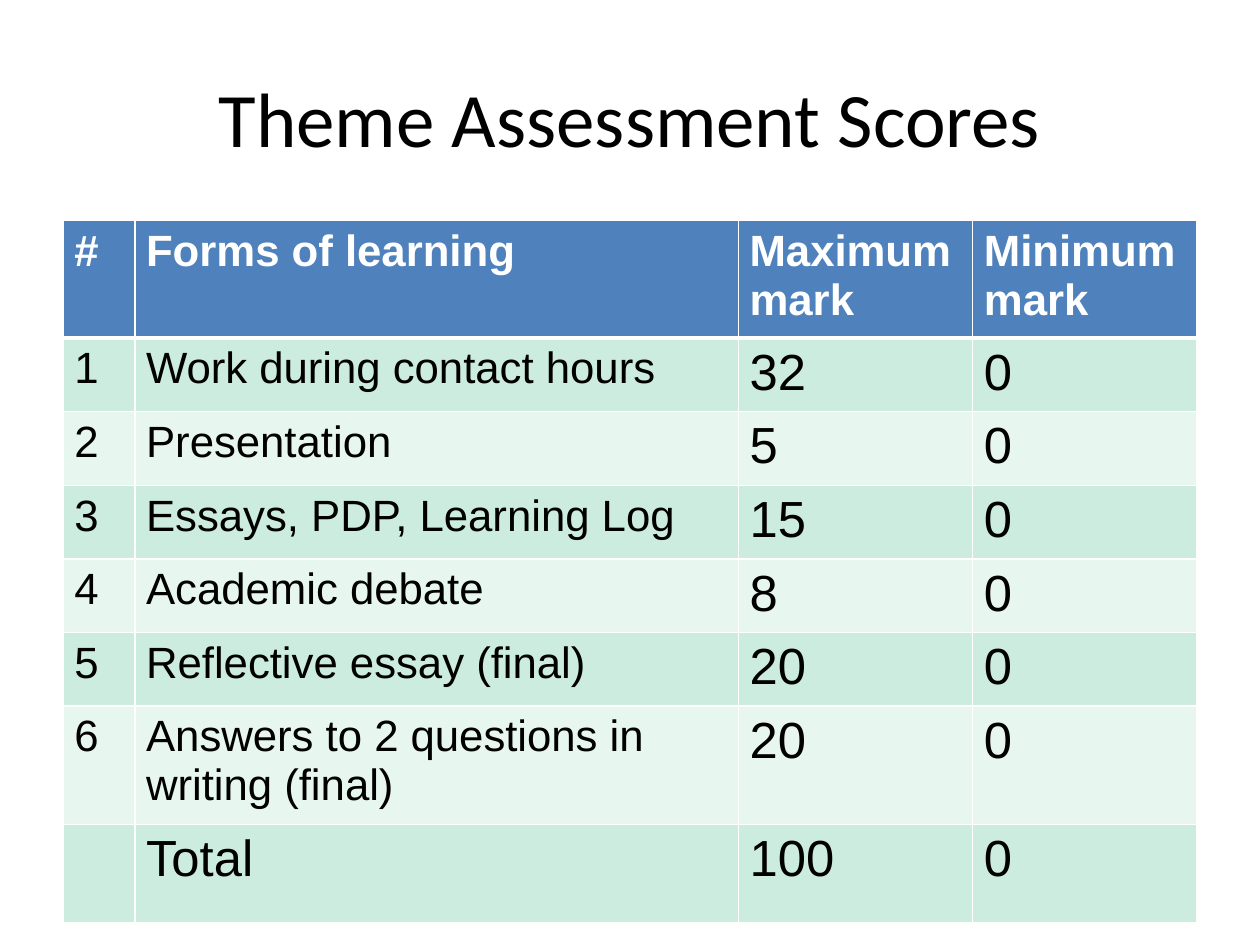
from dataclasses import dataclass

from lxml.etree import SubElement
from pptx import Presentation
from pptx.dml.color import RGBColor as Color
from pptx.enum.text import MSO_ANCHOR as Anchor, PP_ALIGN as Align
from pptx.oxml.ns import qn
from pptx.util import Inches, Pt

TITLE = "Theme Assessment Scores"
HEADER = ("#", "Forms of learning", "Maximum mark", "Minimum mark")
SCORES = [
    ("1", "Work during contact hours", "32", "0"),
    ("2", "Presentation", "5", "0"),
    ("3", "Essays, PDP, Learning Log", "15", "0"),
    ("4", "Academic debate", "8", "0"),
    ("5", "Reflective essay (final)", "20", "0"),
    ("6", "Answers to 2 questions in writing (final)", "20", "0"),
]
TOTAL = ("", "Total", "100", "0")

COLUMN_WIDTHS = (0.57, 4.79, 1.86, 1.78)
ROW_HEIGHTS = (0.93, *[0.57] * 5, 0.94, 0.78)
MARK_COLUMN = 2  # first of the columns that hold marks


@dataclass(frozen=True)
class Theme:
    title_font: str = "Calibri"
    table_font: str = "Arial"
    title_size: int = 44
    label_size: int = 25
    mark_size: int = 29
    text: str = "000000"
    header_text: str = "FFFFFF"
    header_fill: str = "4F81BD"
    bands: tuple = ("CBECDE", "E7F6EF")
    border: str = "FFFFFF"
    thin: int = 1
    thick: int = 3


THEME = Theme()


def add_run(paragraph, text, font_name, size, color, bold=False):
    run = paragraph.add_run()
    run.text = text
    run.font.name = font_name
    run.font.size = Pt(size)
    run.font.bold = bold
    run.font.color.rgb = Color.from_string(color)


def add_title(slide):
    box = slide.shapes.add_textbox(Inches(0.5), Inches(0.3), Inches(9), Inches(1.25))
    frame = box.text_frame
    frame.word_wrap = True
    frame.vertical_anchor = Anchor.MIDDLE
    paragraph = frame.paragraphs[0]
    paragraph.alignment = Align.CENTER
    add_run(paragraph, TITLE, THEME.title_font, THEME.title_size, THEME.text)


def set_borders(cell, top, bottom):
    """Draw all four sides; must come before the fill, as the schema orders them."""
    properties = cell._tc.get_or_add_tcPr()
    widths = {"lnL": THEME.thin, "lnR": THEME.thin, "lnT": top, "lnB": bottom}
    for side, width in widths.items():
        line = SubElement(properties, qn(f"a:{side}"), w=str(Pt(width)))
        fill = SubElement(line, qn("a:solidFill"))
        SubElement(fill, qn("a:srgbClr"), val=THEME.border)


def fill_cell(cell, text, row, column):
    is_header = row == 0
    set_borders(
        cell,
        top=THEME.thick if row == 1 else THEME.thin,
        bottom=THEME.thick if is_header else THEME.thin,
    )
    band = THEME.bands[(row - 1) % 2]
    cell.fill.solid()
    cell.fill.fore_color.rgb = Color.from_string(THEME.header_fill if is_header else band)
    cell.margin_left = cell.margin_right = Inches(0.09)
    cell.margin_top = cell.margin_bottom = Inches(0.05)
    if text:
        is_large = not is_header and (column >= MARK_COLUMN or row > len(SCORES))
        add_run(
            cell.text_frame.paragraphs[0],
            text,
            THEME.table_font,
            THEME.mark_size if is_large else THEME.label_size,
            THEME.header_text if is_header else THEME.text,
            bold=is_header,
        )


def add_score_table(slide):
    rows = [HEADER, *SCORES, TOTAL]
    table = slide.shapes.add_table(
        len(rows), len(HEADER), Inches(0.5), Inches(1.75),
        Inches(sum(COLUMN_WIDTHS)), Inches(sum(ROW_HEIGHTS)),
    ).table
    for column, width in zip(table.columns, COLUMN_WIDTHS):
        column.width = Inches(width)
    for row, height in zip(table.rows, ROW_HEIGHTS):
        row.height = Inches(height)
    for row_index, texts in enumerate(rows):
        for column_index, text in enumerate(texts):
            cell = table.cell(row_index, column_index)
            fill_cell(cell, text, row_index, column_index)


def main():
    presentation = Presentation()
    presentation.slide_width = Inches(10)
    presentation.slide_height = Inches(7.5)
    slide = presentation.slides.add_slide(presentation.slide_layouts[6])
    add_title(slide)
    add_score_table(slide)
    presentation.save("out.pptx")


if __name__ == "__main__":
    main()
